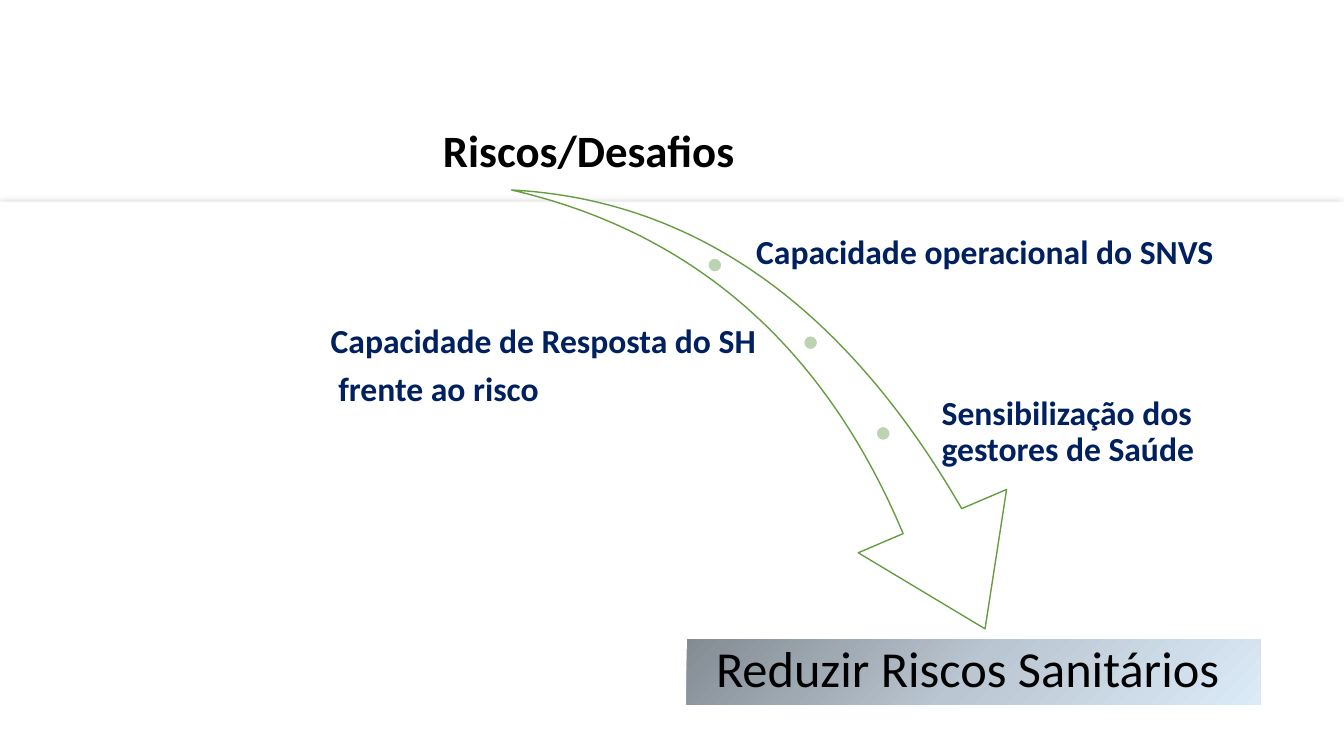
from dataclasses import dataclass

from lxml.etree import SubElement
from pptx import Presentation
from pptx.dml.color import RGBColor
from pptx.enum.shapes import MSO_SHAPE
from pptx.enum.text import MSO_ANCHOR, PP_ALIGN
from pptx.oxml import parse_xml
from pptx.oxml.ns import nsdecls, qn
from pptx.shapes.autoshape import Shape
from pptx.slide import Slide
from pptx.util import Emu, Pt

EMU_PER_PX = 9144
PAGE_WIDTH, PAGE_HEIGHT = 1333, 750
NAVY, BLACK, WHITE = "002060", "000000", "FFFFFF"
DOT_SIZE = 14


@dataclass(frozen=True)
class Area:
    left: int
    top: int
    width: int
    height: int


@dataclass(frozen=True)
class Label:
    area: Area
    lines: tuple[str, ...]
    size: int = 24
    color: str = NAVY
    bold: bool = True
    align: PP_ALIGN = PP_ALIGN.LEFT
    anchor: MSO_ANCHOR = MSO_ANCHOR.MIDDLE
    inset: int = 3


BANNER = Area(681, 634, 569, 65)
BANNER_STOPS = ((0, "838B93"), (50, "BAC6D1"), (100, "DCEBF8"))
DOTS = ((702, 256), (797, 333), (869, 423))
LABELS = (
    Label(Area(306, 78, 556, 102), ("Riscos/Desafios",), size=32, color=BLACK,
          align=PP_ALIGN.CENTER, anchor=MSO_ANCHOR.BOTTOM, inset=4),
    Label(Area(747, 201, 483, 102), ("Capacidade operacional do SNVS",)),
    Label(Area(325, 313, 456, 102), ("Capacidade de Resposta do SH", " frente ao risco")),
    Label(Area(931, 378, 364, 102), ("Sensibilização dos gestores de Saúde",)),
    Label(BANNER, ("Reduzir Riscos Sanitários ",), size=36, color=BLACK, bold=False,
          align=PP_ALIGN.CENTER, anchor=MSO_ANCHOR.TOP, inset=5),
)


def px(length: int) -> Emu:
    return Emu(length * EMU_PER_PX)


def rgb(color: str) -> RGBColor:
    return RGBColor.from_string(color)


def place(area: Area) -> tuple[Emu, Emu, Emu, Emu]:
    return px(area.left), px(area.top), px(area.width), px(area.height)


def add_shape(page: Slide, kind: MSO_SHAPE, area: Area, fill: str, line: str | None = None) -> Shape:
    shape = page.shapes.add_shape(kind, *place(area))
    shape.shadow.inherit = False
    shape.fill.solid()
    shape.fill.fore_color.rgb = rgb(fill)
    if line is None:
        shape.line.fill.background()
    else:
        shape.line.color.rgb = rgb(line)
        shape.line.width = Pt(1)
    return shape


def add_glow_shadow(shape: Shape, color: str, opacity: int, blur: int) -> None:
    effects = shape._element.spPr.find(qn("a:effectLst"))
    shadow = SubElement(effects, qn("a:outerShdw"), blurRad=str(Pt(blur)), dist="0", dir="0",
                        algn="ctr", rotWithShape="0")
    tone = SubElement(shadow, qn("a:srgbClr"), val=color)
    SubElement(tone, qn("a:alpha"), val=str(opacity * 1000))


def set_gradient(shape: Shape, stops: tuple[tuple[int, str], ...], angle: int) -> None:
    marks = "".join(
        f'<a:gs pos="{position * 1000}"><a:srgbClr val="{color}"/></a:gs>' for position, color in stops
    )
    gradient = parse_xml(
        f'<a:gradFill {nsdecls("a")} rotWithShape="1"><a:gsLst>{marks}</a:gsLst>'
        f'<a:lin ang="{angle * 60000}" scaled="0"/></a:gradFill>'
    )
    properties = shape._element.spPr
    properties.replace(properties.find(qn("a:solidFill")), gradient)


def add_label(page: Slide, label: Label) -> None:
    box = page.shapes.add_textbox(*place(label.area))
    frame = box.text_frame
    frame.word_wrap = True
    frame.vertical_anchor = label.anchor
    frame.margin_left = frame.margin_right = px(label.inset)
    frame.margin_top = frame.margin_bottom = px(label.inset)
    for index, line in enumerate(label.lines):
        para = frame.add_paragraph() if index else frame.paragraphs[0]
        para.alignment = label.align
        para.line_spacing = 0.9
        after = SubElement(para._p.get_or_add_pPr(), qn("a:spcAft"))
        SubElement(after, qn("a:spcPct"), val="35000")
        span = para.add_run()
        span.text = line
        span.font.name = "Calibri"
        span.font.size = Pt(label.size)
        span.font.bold = label.bold
        span.font.color.rgb = rgb(label.color)


def main() -> None:
    deck = Presentation()
    deck.slide_width, deck.slide_height = px(PAGE_WIDTH), px(PAGE_HEIGHT)
    page = deck.slides.add_slide(deck.slide_layouts[6])

    panel = add_shape(page, MSO_SHAPE.RECTANGLE, Area(0, 200, PAGE_WIDTH, 550), WHITE)
    add_glow_shadow(panel, "A6A6A6", opacity=42, blur=5)

    arrow = add_shape(page, MSO_SHAPE.SWOOSH_ARROW, Area(495, 205, 552, 385), WHITE, "669D40")
    arrow.rotation = 73.3
    arrow.adjustments[0] = 0.163
    arrow.adjustments[1] = 0.314

    for left, top in DOTS:
        add_shape(page, MSO_SHAPE.OVAL, Area(left, top, DOT_SIZE, DOT_SIZE), "BBD3B1", WHITE)

    banner = add_shape(page, MSO_SHAPE.RECTANGLE, BANNER, WHITE)
    set_gradient(banner, BANNER_STOPS, angle=45)

    for label in LABELS:
        add_label(page, label)

    deck.save("out.pptx")


if __name__ == "__main__":
    main()
